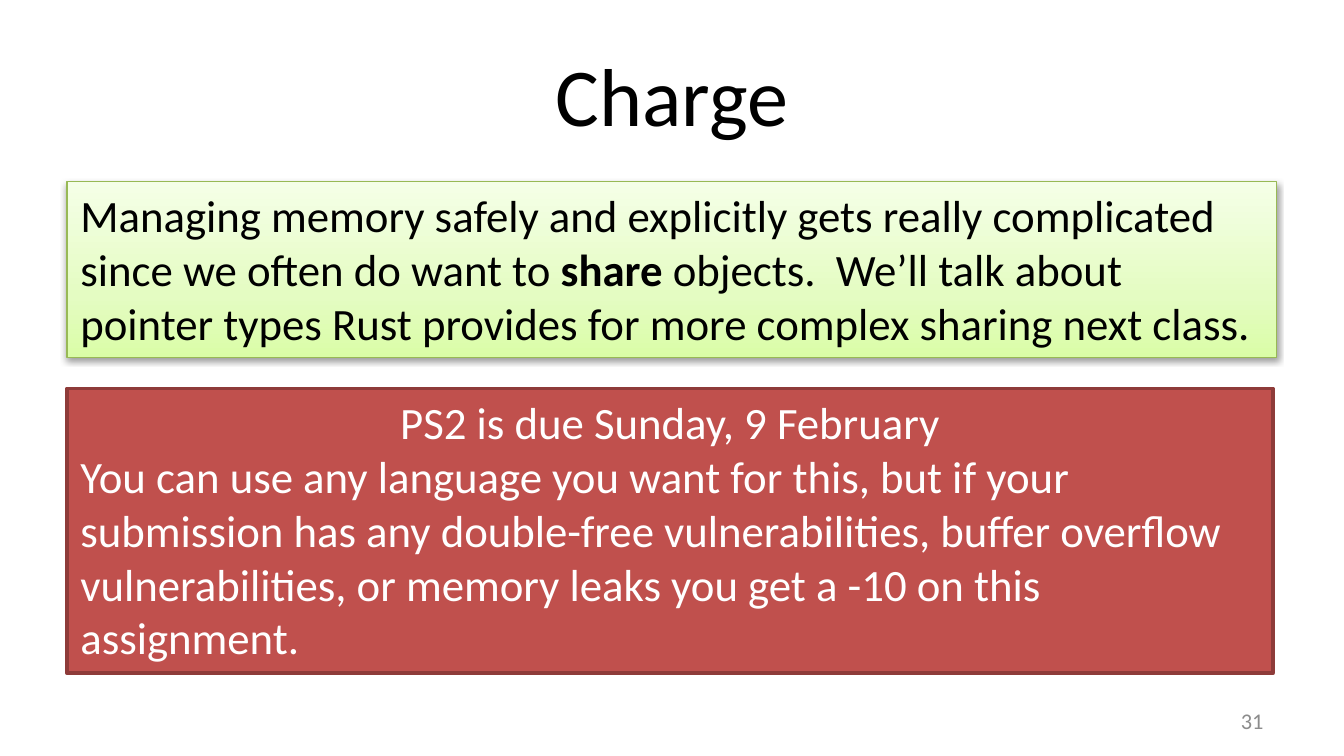
from pptx import Presentation
from pptx.dml.color import RGBColor
from pptx.enum.shapes import MSO_SHAPE
from pptx.enum.text import MSO_ANCHOR, MSO_AUTO_SIZE, PP_ALIGN
from pptx.oxml import parse_xml
from pptx.oxml.ns import nsdecls, qn
from pptx.util import Inches, Pt

BLACK = RGBColor(0x00, 0x00, 0x00)
WHITE = RGBColor(0xFF, 0xFF, 0xFF)
GRAY = RGBColor(0x8C, 0x8C, 0x8C)
RED = RGBColor(0xC0, 0x50, 0x4D)
DARK_RED = RGBColor(0x8E, 0x3B, 0x39)
GREEN = RGBColor(0x98, 0xB9, 0x55)
GREEN_STOPS = (
    (0, RGBColor(0xDA, 0xFD, 0xA7)),
    (35, RGBColor(0xE4, 0xFC, 0xC2)),
    (100, RGBColor(0xF5, 0xFF, 0xE7)),
)

LEFT = 0.5
BODY = {"name": "Calibri", "size": Pt(24)}


def add_span(para, text, font, color):
    span = para.add_run()
    span.text = text
    for name, value in font.items():
        setattr(span.font, name, value)
    span.font.color.rgb = color


def place(shape, left, top, width, height):
    shape.left, shape.top = Inches(left), Inches(top)
    shape.width, shape.height = Inches(width), Inches(height)


def add_title(page, text):
    title = page.shapes.title
    place(title, LEFT, 0.23, 9, 0.94)
    title.text_frame.vertical_anchor = MSO_ANCHOR.MIDDLE
    para = title.text_frame.paragraphs[0]
    para.alignment = PP_ALIGN.CENTER
    add_span(para, text, {"name": "Calibri", "size": Pt(44)}, BLACK)


def add_page_number(page, text):
    box = page.shapes.add_textbox(Inches(7.17), Inches(5.21), Inches(2.33), Inches(0.3))
    box.text_frame.word_wrap = True
    box.text_frame.vertical_anchor = MSO_ANCHOR.MIDDLE
    para = box.text_frame.paragraphs[0]
    para.alignment = PP_ALIGN.RIGHT
    add_span(para, text, {"name": "Calibri", "size": Pt(12)}, GRAY)


def add_panel(page, top, width, height, line_color, line_width, text_color, paragraphs):
    """Add a bordered rectangle; paragraphs are (alignment, [(text, bold), ...])."""
    panel = page.shapes.add_shape(
        MSO_SHAPE.RECTANGLE, Inches(LEFT), Inches(top), Inches(width), Inches(height))
    panel.shadow.inherit = False
    panel.line.color.rgb = line_color
    panel.line.width = Pt(line_width)
    frame = panel.text_frame
    frame.word_wrap = True
    frame.auto_size = MSO_AUTO_SIZE.SHAPE_TO_FIT_TEXT
    frame.vertical_anchor = MSO_ANCHOR.TOP
    for index, (alignment, spans) in enumerate(paragraphs):
        para = frame.add_paragraph() if index else frame.paragraphs[0]
        para.alignment = alignment
        for text, bold in spans:
            add_span(para, text, {**BODY, "bold": bold}, text_color)
    return panel


def set_gradient(shape, stops):
    """Fill the shape with stops that run from bottom to top."""
    shape.fill.gradient()
    shape.fill.gradient_angle = 90
    stop_list = shape.element.spPr.find(qn("a:gradFill")).find(qn("a:gsLst"))
    for old_stop in list(stop_list):
        stop_list.remove(old_stop)
    for percent, color in stops:
        stop_list.append(parse_xml(
            f'<a:gs {nsdecls("a")} pos="{percent * 1000}"><a:srgbClr val="{color}"/></a:gs>'))


def add_drop_shadow(shape):
    shape.element.spPr.find(qn("a:effectLst")).append(parse_xml(
        f'<a:outerShdw {nsdecls("a")} blurRad="{Pt(3.1)}" dist="{Pt(1.6)}" dir="5400000" '
        f'rotWithShape="0"><a:srgbClr val="{BLACK}"><a:alpha val="38000"/></a:srgbClr>'
        '</a:outerShdw>'))


def main():
    deck = Presentation()
    deck.slide_width, deck.slide_height = Inches(10), Inches(10 * 9 / 16)
    page = deck.slides.add_slide(deck.slide_layouts[5])

    add_title(page, "Charge")
    add_page_number(page, "31")

    assignment = add_panel(page, 2.89, 8.97, 2.12, DARK_RED, 2, WHITE, [
        (PP_ALIGN.CENTER, [("PS2 is due Sunday, 9 February", False)]),
        (PP_ALIGN.LEFT, [(
            "You can use any language you want for this, but if your submission has any "
            "double-free vulnerabilities, buffer overflow vulnerabilities, or memory leaks "
            "you get a -10 on this assignment.", False)]),
    ])
    assignment.fill.solid()
    assignment.fill.fore_color.rgb = RED

    memory = add_panel(page, 1.35, 9, 1.31, GREEN, 0.75, BLACK, [
        (PP_ALIGN.LEFT, [
            ("Managing memory safely and explicitly gets really complicated since we "
             "often do want to ", False),
            ("share", True),
            (" objects.  We’ll talk about pointer types Rust provides for more complex "
             "sharing next class.", False),
        ]),
    ])
    set_gradient(memory, GREEN_STOPS)
    add_drop_shadow(memory)

    deck.save("out.pptx")


if __name__ == "__main__":
    main()
